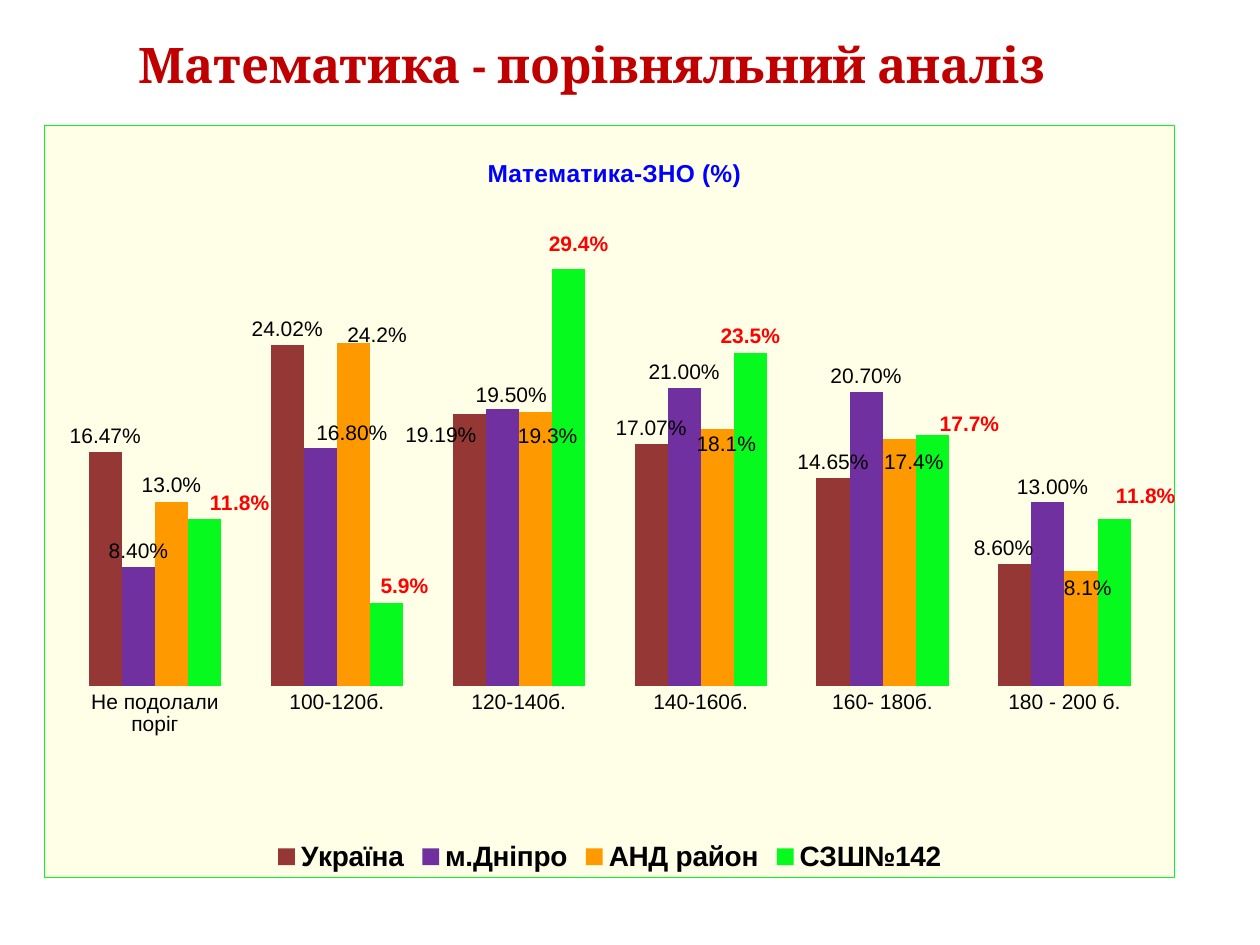
"""Build a slide comparing mathematics exam results in a clustered column chart."""
from lxml.etree import SubElement
from pptx import Presentation
from pptx.chart.data import CategoryChartData
from pptx.dml.color import RGBColor
from pptx.enum.chart import XL_CHART_TYPE, XL_LABEL_POSITION, XL_LEGEND_POSITION, XL_TICK_MARK
from pptx.enum.text import MSO_ANCHOR, PP_ALIGN
from pptx.oxml import parse_xml
from pptx.oxml.ns import nsdecls, qn
from pptx.util import Inches, Pt

BLACK = RGBColor(0, 0, 0)
RED = RGBColor(0xFF, 0, 0)
DARK_RED = RGBColor(0xC0, 0, 0)
BLUE = RGBColor(0, 0, 0xFF)
BROWN = RGBColor(0x95, 0x37, 0x35)
PURPLE = RGBColor(0x70, 0x30, 0xA0)
ORANGE = RGBColor(0xFF, 0x99, 0)
GREEN = RGBColor(0x06, 0xFA, 0x1D)
CREAM = RGBColor(0xFF, 0xFF, 0xCC)

HEAD = "Математика - порівняльний аналіз"
TITLE = "Математика-ЗНО (%)"
BANDS = ["Не подолали поріг", "100-120б.", "120-140б.", "140-160б.", "160- 180б.", "180 - 200 б."]
GROUPS = [
    {"name": "Україна", "fill": BROWN, "ink": BLACK, "form": "0.00%",
     "vals": [0.1647, 0.2402, 0.1919, 0.1707, 0.1465, 0.086],
     "moves": {2: (-0.025, 0.05), 5: (-0.01, 0)}},
    {"name": "м.Дніпро", "fill": PURPLE, "ink": BLACK, "form": "0.00%",
     "vals": [0.084, 0.168, 0.195, 0.21, 0.207, 0.13],
     "moves": {1: (0.028, 0.002), 2: (0.008, 0.003), 5: (0.004, 0.002)}},
    {"name": "АНД район", "fill": ORANGE, "ink": BLACK, "form": "0.0%",
     "vals": [0.13, 0.242, 0.193, 0.181, 0.174, 0.081],
     "moves": {1: (0.021, 0.011), 2: (0.011, 0.053), 3: (0.008, 0.042),
               4: (0.013, 0.052), 5: (0.006, 0.044)}},
    {"name": "СЗШ№142", "fill": GREEN, "ink": RED, "form": "0.0%",
     "vals": [0.118, 0.059, 0.294, 0.235, 0.177, 0.118],
     "moves": {0: (0.031, 0.001), 1: (0.016, 0), 2: (0.009, -0.011),
               4: (0.033, 0.007), 5: (0.028, -0.008)}},
]


def style(font, size, ink, bold=False, face="Arial"):
    font.size, font.bold, font.name = Pt(size), bold, face
    font.color.rgb = ink


def place(node, index, **parts):
    for old in node.findall(qn("c:layout")):
        node.remove(old)
    layout = parse_xml(f"<c:layout {nsdecls('c')}><c:manualLayout/></c:layout>")
    for tag, val in parts.items():
        SubElement(layout[0], qn("c:" + tag)).set("val", str(val))
    node.insert(index, layout)


def add_head(slide):
    frame = slide.shapes.add_textbox(Inches(1), Inches(0.13), Inches(8.5), Inches(0.75)).text_frame
    frame.word_wrap = True
    frame.vertical_anchor = MSO_ANCHOR.MIDDLE
    para = frame.paragraphs[0]
    para.alignment = PP_ALIGN.LEFT
    run = para.add_run()
    run.text = HEAD
    style(run.font, 28, DARK_RED, True, "Cambria")


def paint(series, group):
    series.format.fill.solid()
    series.format.fill.fore_color.rgb = group["fill"]
    bold = group["ink"] == RED
    labels = series.data_labels
    labels.show_value = True
    labels.number_format = group["form"]
    labels.number_format_is_linked = False
    labels.position = XL_LABEL_POSITION.OUTSIDE_END
    style(labels.font, 12, group["ink"], bold)
    for index, (x, y) in group["moves"].items():
        label = series.points[index].data_label
        style(label.font, 12, group["ink"], bold)
        label.position = XL_LABEL_POSITION.OUTSIDE_END
    for node in labels._element.findall(qn("c:dLbl")):
        x, y = group["moves"][int(node.find(qn("c:idx")).get("val"))]
        place(node, 1, x=x, y=y)
        node.insert(2, parse_xml(
            f'<c:numFmt {nsdecls("c")} formatCode="{group["form"]}" sourceLinked="0"/>'))


def add_chart(slide):
    data = CategoryChartData(number_format="0.00%")
    data.categories = BANDS
    for group in GROUPS:
        data.add_series(group["name"], group["vals"])
    chart = slide.shapes.add_chart(
        XL_CHART_TYPE.COLUMN_CLUSTERED, Inches(0.35), Inches(0.99),
        Inches(8.98), Inches(5.98), data).chart
    style(chart.font, 12, BLACK)
    space = chart._chartSpace
    space.find(qn("c:txPr")).addprevious(parse_xml(
        f'<c:spPr {nsdecls("c", "a")}><a:solidFill><a:srgbClr val="{CREAM}">'
        f'<a:alpha val="47000"/></a:srgbClr></a:solidFill><a:ln w="{Pt(0.75)}">'
        f'<a:solidFill><a:srgbClr val="{GREEN}"/></a:solidFill></a:ln></c:spPr>'))

    chart.has_title = True
    run = chart.chart_title.text_frame.paragraphs[0].add_run()
    run.text = TITLE
    style(run.font, 14, BLUE, True)
    place(chart.chart_title._element, 1, xMode="edge", yMode="edge", x=0.388, y=0.037)
    place(space.find(".//" + qn("c:plotArea")), 0, layoutTarget="inner",
          xMode="edge", yMode="edge", x=0.017, y=0.085, w=0.966, h=0.661)

    chart.has_legend = True
    chart.legend.position = XL_LEGEND_POSITION.BOTTOM
    chart.legend.include_in_layout = False
    style(chart.legend.font, 16, BLACK, True)

    axis = chart.category_axis
    axis.major_tick_mark = XL_TICK_MARK.NONE
    axis.format.line.fill.background()
    style(axis.tick_labels.font, 12, BLACK)
    scale = chart.value_axis
    scale.minimum_scale, scale.maximum_scale = 0, 0.35
    scale.has_major_gridlines = False
    scale.visible = False

    plot = chart.plots[0]
    plot.gap_width, plot.overlap = 150, 0
    plot.vary_by_categories = False
    for series, group in zip(plot.series, GROUPS):
        paint(series, group)


def main():
    deck = Presentation()
    deck.slide_width, deck.slide_height = Inches(10), Inches(7.5)
    slide = deck.slides.add_slide(deck.slide_layouts[6])
    add_head(slide)
    add_chart(slide)
    deck.save("out.pptx")


if __name__ == "__main__":
    main()
